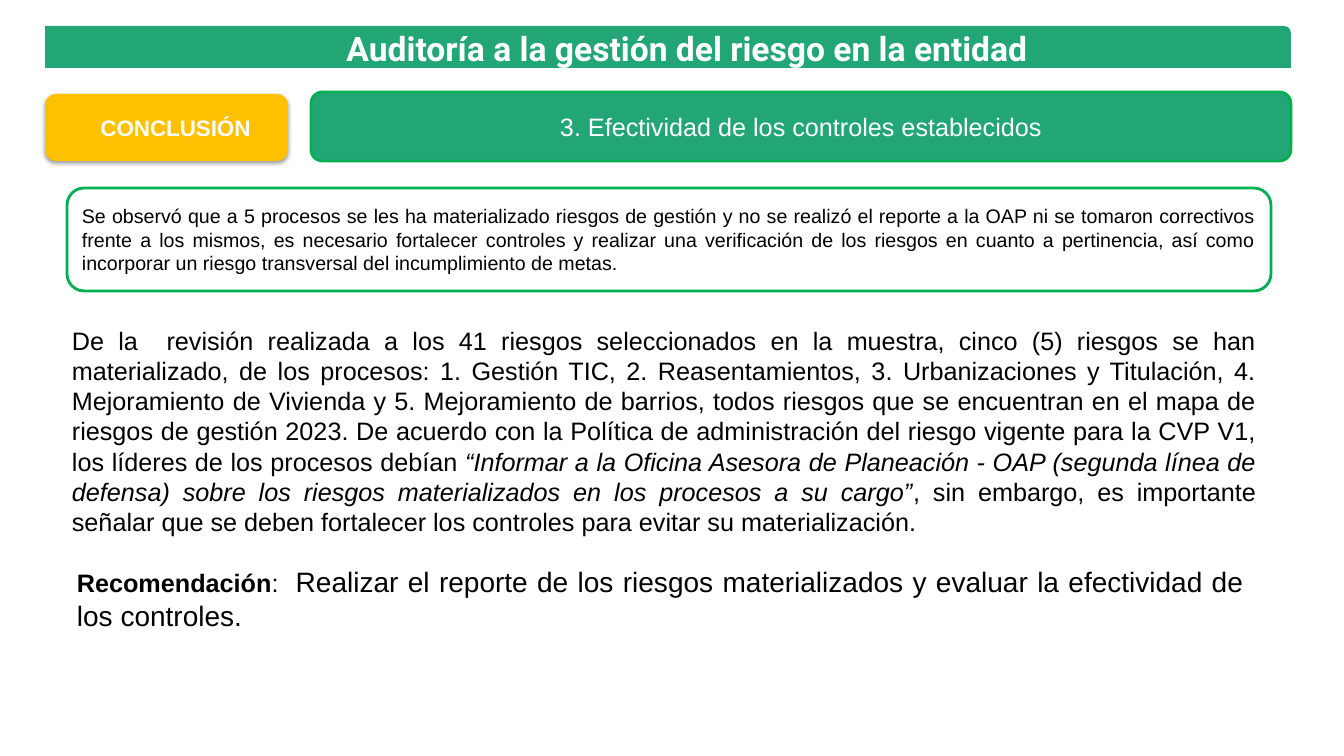
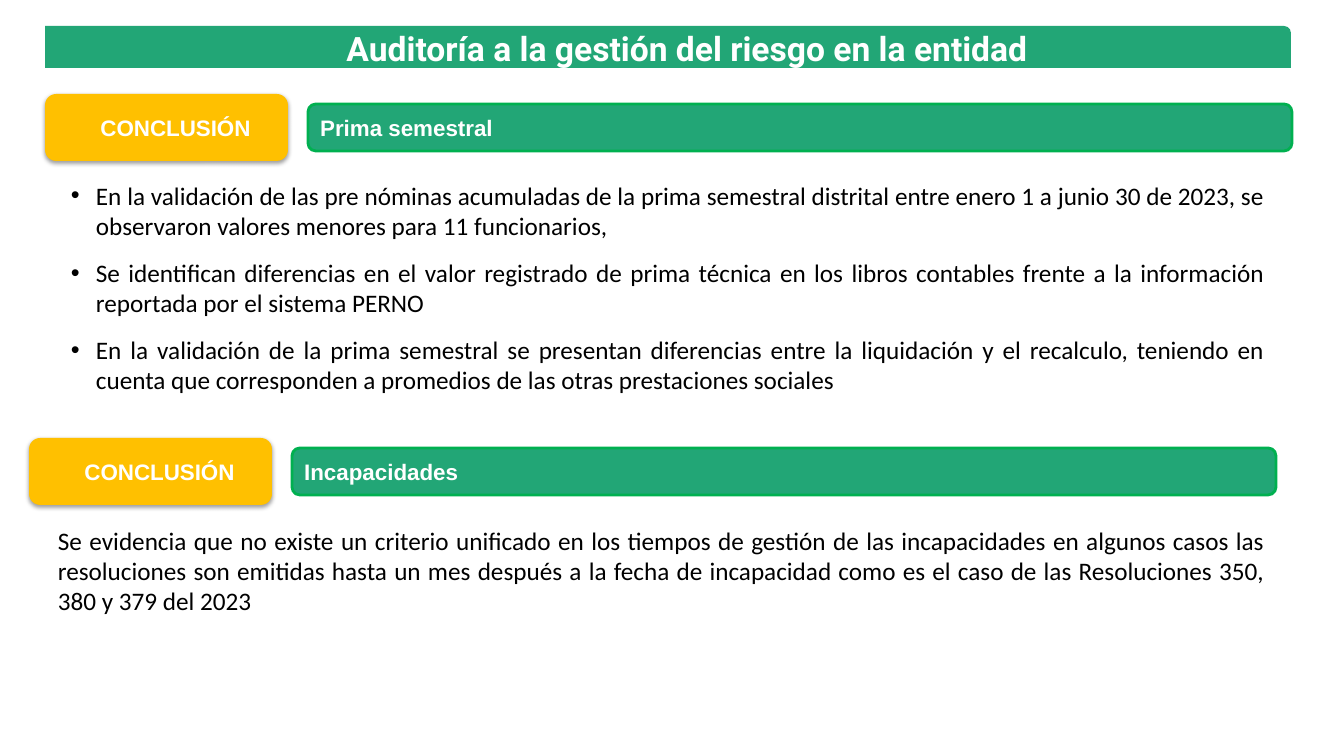
from lxml import etree
from pptx import Presentation
from pptx.dml.color import RGBColor
from pptx.enum.shapes import MSO_SHAPE as SHAPE
from pptx.enum.text import MSO_ANCHOR as ANCHOR, MSO_AUTO_SIZE as FIT, PP_ALIGN as ALIGN
from pptx.oxml.ns import qn
from pptx.util import Pt

EMU_PER_PX = 914400 / 100.8
WHITE = RGBColor(0xFF, 0xFF, 0xFF)
BLACK = RGBColor(0, 0, 0)
GREEN = RGBColor(0x22, 0xA6, 0x76)
BORDER_GREEN = RGBColor(0x00, 0xB0, 0x50)
AMBER = RGBColor(0xFF, 0xC0, 0x00)
TITLE = "Auditoría a la gestión del riesgo en la entidad"
LABEL_WIDTH, LABEL_HEIGHT = 243, 67
BULLET_INDENT = 25


def px(length):
    return round(length * EMU_PER_PX)


def set_font(font, size, color=BLACK, name="Arial", bold=False):
    font.size, font.name, font.bold = Pt(size), name, bold
    font.color.rgb = color


def write(paragraph, text, align, size, **style):
    paragraph.text = text
    paragraph.alignment = align
    set_font(paragraph.font, size, **style)


def add_panel(slide, box, kind=SHAPE.ROUNDED_RECTANGLE, fill=None, border=None):
    panel = slide.shapes.add_shape(kind, *map(px, box))
    panel.shadow.inherit = False
    if fill is None:
        panel.fill.background()
    else:
        panel.fill.solid()
        panel.fill.fore_color.rgb = fill
    if border is None:
        panel.line.fill.background()
    else:
        panel.line.color.rgb = border
        panel.line.width = Pt(2)
    panel.text_frame.word_wrap = True
    panel.text_frame.vertical_anchor = ANCHOR.MIDDLE
    return panel


def add_text_frame(slide, box):
    frame = slide.shapes.add_textbox(*map(px, box)).text_frame
    frame.word_wrap = True
    return frame


def add_soft_shadow(panel):
    effects = panel._element.spPr.find(qn("a:effectLst"))
    shadow = etree.SubElement(effects, qn("a:outerShdw"), blurRad="40000",
                              dist="20000", dir="5400000", rotWithShape="0")
    color = etree.SubElement(shadow, qn("a:srgbClr"), val="000000")
    etree.SubElement(color, qn("a:alpha"), val="38000")


def add_titled_slide(deck):
    slide = deck.slides.add_slide(deck.slide_layouts[5])
    band = add_panel(slide, (45, 26, 1246, 42), SHAPE.ROUND_1_RECTANGLE, GREEN)
    title = slide.shapes.title
    band._element.addnext(title._element)  # title in front of its band
    title.left, title.top, title.width, title.height = map(px, (228, 14, 918, 68))
    frame = title.text_frame
    frame.auto_size, frame.vertical_anchor = FIT.NONE, ANCHOR.MIDDLE
    write(frame.paragraphs[0], TITLE, ALIGN.CENTER, 24,
          color=WHITE, name="Roboto", bold=True)
    return slide


def add_conclusion_label(slide, left, top):
    label = add_panel(slide, (left, top, LABEL_WIDTH, LABEL_HEIGHT), fill=AMBER)
    add_soft_shadow(label)
    label.text_frame.margin_left = px(28)
    write(label.text_frame.paragraphs[0], "CONCLUSIÓN", ALIGN.CENTER, 16,
          color=WHITE, bold=True)


def add_topic(slide, box, text, align, size, bold):
    topic = add_panel(slide, box, fill=GREEN, border=BORDER_GREEN)
    write(topic.text_frame.paragraphs[0], text, align, size, color=WHITE, bold=bold)


def add_conclusion_heading(slide, left, top, text):
    """Label with a slim topic bar centred beside it."""
    height = 47
    bar = (left + LABEL_WIDTH + 20, top + (LABEL_HEIGHT - height) // 2, 984, height)
    add_topic(slide, bar, text, ALIGN.JUSTIFY, 16, True)
    add_conclusion_label(slide, left, top)


def add_bullets(slide, box, items):
    frame = add_text_frame(slide, box)
    for index, item in enumerate(items):
        paragraph = frame.add_paragraph() if index else frame.paragraphs[0]
        props = paragraph._p.get_or_add_pPr()
        props.set("marL", str(px(BULLET_INDENT)))
        props.set("indent", str(-px(BULLET_INDENT)))
        etree.SubElement(props, qn("a:buFont"), typeface="Arial")
        etree.SubElement(props, qn("a:buChar"), char="•")
        paragraph.space_after = Pt(12)
        write(paragraph, item, ALIGN.JUSTIFY, 18, name="Calibri")


def build_controls_slide(deck):
    slide = add_titled_slide(deck)
    add_conclusion_label(slide, 45, 94)
    add_topic(slide, (311, 92, 980, 69), "3. Efectividad de los controles establecidos",
              ALIGN.CENTER, 18, False)

    # Framed finding
    finding = add_panel(slide, (67, 188, 1204, 103), border=BORDER_GREEN)
    write(finding.text_frame.paragraphs[0],
          "Se observó que a 5 procesos se les ha materializado riesgos de gestión y no se "
          "realizó el reporte a la OAP ni se tomaron correctivos frente a los mismos, es "
          "necesario fortalecer controles y realizar una verificación de los riesgos en "
          "cuanto a pertinencia, así como incorporar un riesgo transversal del "
          "incumplimiento de metas.", ALIGN.JUSTIFY, 14)

    # Explanation with the quoted policy in italics
    explanation = add_text_frame(slide, (62, 320, 1204, 224)).paragraphs[0]
    write(explanation,
          "De la  revisión realizada a los 41 riesgos seleccionados en la muestra, cinco (5) "
          "riesgos se han materializado, de los procesos: 1. Gestión TIC, 2. Reasentamientos, "
          "3. Urbanizaciones y Titulación, 4. Mejoramiento de Vivienda y 5. Mejoramiento de "
          "barrios, todos riesgos que se encuentran en el mapa de riesgos de gestión 2023. "
          "De acuerdo con la Política de administración del riesgo vigente para la CVP V1, "
          "los líderes de los procesos debían ", ALIGN.JUSTIFY, 18)
    quote = explanation.add_run()
    quote.text = ("“Informar a la Oficina Asesora de Planeación - OAP (segunda línea de "
                  "defensa) sobre los riesgos materializados en los procesos a su cargo”")
    quote.font.italic = True
    explanation.add_run().text = (", sin embargo, es importante señalar que se deben "
                                  "fortalecer los controles para evitar su materialización.")

    # Recommendation
    recommendation = add_text_frame(slide, (67, 560, 1187, 78)).paragraphs[0]
    recommendation.alignment = ALIGN.JUSTIFY
    for text, size, bold in (
            ("Recomendación", 18, True),
            (":  ", 18, False),
            ("Realizar el reporte de los riesgos materializados y evaluar la efectividad "
             "de los controles.", 20, False)):
        run = recommendation.add_run()
        run.text = text
        set_font(run.font, size, bold=bold)


def build_payroll_slide(deck):
    slide = add_titled_slide(deck)

    # Half-year bonus
    add_conclusion_heading(slide, 45, 94, "Prima semestral")
    add_bullets(slide, (61, 175, 1214, 228), (
        "En la validación de las pre nóminas acumuladas de la prima semestral distrital "
        "entre enero 1 a junio 30 de 2023, se observaron valores menores para 11 funcionarios,",
        "Se identifican diferencias en el valor registrado de prima técnica en los libros "
        "contables frente a la información reportada por el sistema PERNO",
        "En la validación de la prima semestral se presentan diferencias entre la "
        "liquidación y el recalculo, teniendo en cuenta que corresponden a promedios de "
        "las otras prestaciones sociales"))

    # Sick leave
    add_conclusion_heading(slide, 29, 438, "Incapacidades")
    leave = add_text_frame(slide, (48, 520, 1227, 102)).paragraphs[0]
    write(leave,
          "Se evidencia que no existe un criterio unificado en los tiempos de gestión de las "
          "incapacidades en algunos casos las resoluciones son emitidas hasta un mes después "
          "a la fecha de incapacidad como es el caso de las Resoluciones 350, 380 y 379 del "
          "2023", ALIGN.JUSTIFY, 18, name="Calibri")


def main():
    deck = Presentation()
    deck.slide_width, deck.slide_height = px(1344), px(756)
    build_controls_slide(deck)
    build_payroll_slide(deck)
    deck.save("out.pptx")


if __name__ == "__main__":
    main()
